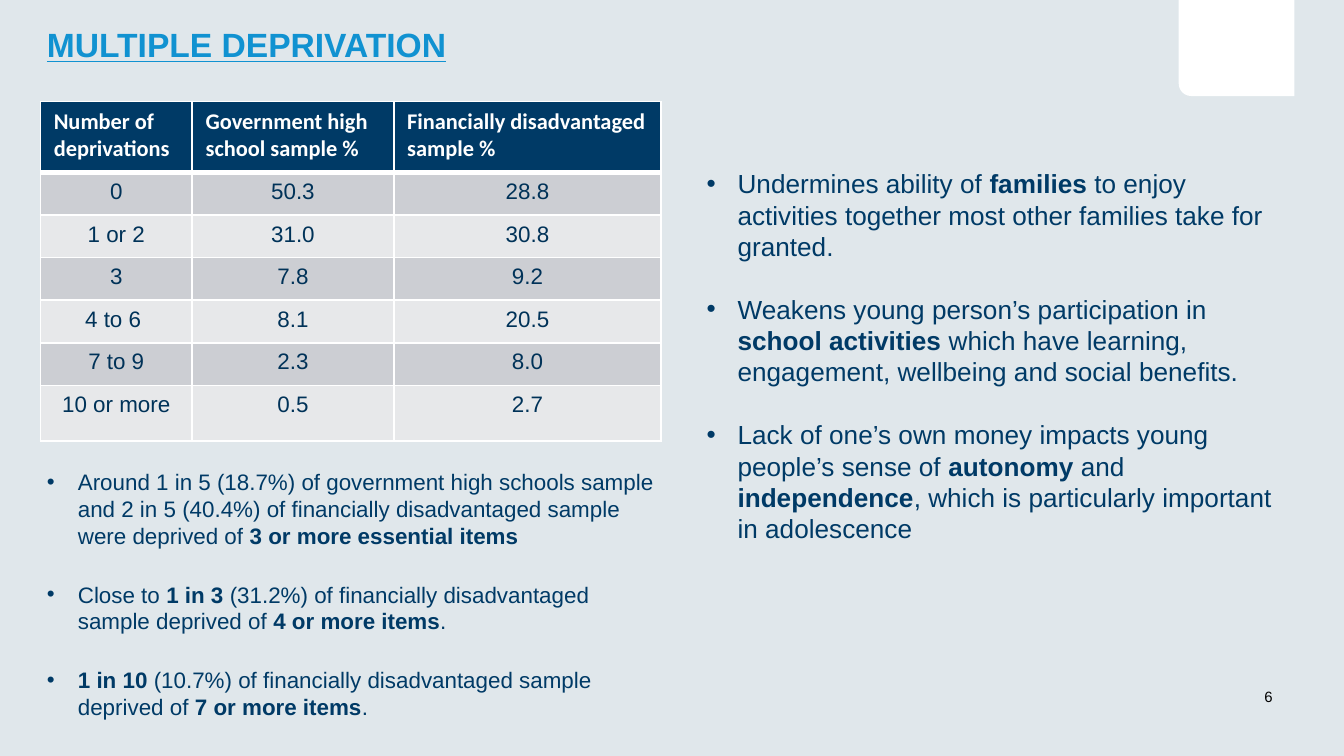
from dataclasses import dataclass

import pptx
import pptx.dml.color
import pptx.enum.shapes
import pptx.enum.text
import pptx.oxml
import pptx.oxml.ns
import pptx.util

SLIDE_WIDTH = pptx.util.Inches(10)
SLIDE_HEIGHT = pptx.util.Inches(5.625)
NAVY, DARK_NAVY, SKY, WHITE = "003A66", "003258", "1192D1", "FFFFFF"
BAND_FILLS = ("CCCED3", "E7E8EA")
BULLET_INDENT = pptx.util.Inches(0.23)


@dataclass
class Area:
    """A rectangle in percent of the slide's width and height."""
    left: float
    top: float
    width: float
    height: float

    def lengths(self):
        return across(self.left), down(self.top), across(self.width), down(self.height)


@dataclass
class Style:
    size: float
    color: str
    font: str = "Arial"
    bold: bool = False
    underline: bool = False


@dataclass
class BulletList:
    area: Area
    style: Style
    gap: float
    inset: tuple[float, float]
    items: list[list[str]]  # runs that start with * are bold


def across(percent: float) -> int:
    return round(SLIDE_WIDTH * percent / 100)


def down(percent: float) -> int:
    return round(SLIDE_HEIGHT * percent / 100)


def paint(target, color: str) -> None:
    """Give a fill or a font a solid colour."""
    if hasattr(target, "solid"):
        target.solid()
        target.fore_color.rgb = pptx.dml.color.RGBColor.from_string(color)
    else:
        target.color.rgb = pptx.dml.color.RGBColor.from_string(color)


def add_run(para, text: str, style: Style, bold: bool = False) -> None:
    span = para.add_run()
    span.text = text
    span.font.name = style.font
    span.font.size = pptx.util.Pt(style.size)
    span.font.bold = style.bold or bold
    if style.underline:
        span.font.underline = True
    paint(span.font, style.color)


def add_box(page, area: Area, inset: tuple[float, float]):
    frame = page.shapes.add_textbox(*area.lengths()).text_frame
    frame.word_wrap = True
    frame.margin_left = frame.margin_right = pptx.util.Inches(inset[0])
    frame.margin_top = frame.margin_bottom = pptx.util.Inches(inset[1])
    return frame


def add_bullets(page, block: BulletList) -> None:
    frame = add_box(page, block.area, block.inset)
    for index, item in enumerate(block.items):
        para = frame.add_paragraph() if index else frame.paragraphs[0]
        properties = para._p.get_or_add_pPr()
        properties.set("marL", str(BULLET_INDENT))
        properties.set("indent", str(-BULLET_INDENT))
        properties.append(pptx.oxml.parse_xml(
            f'<a:buFont {pptx.oxml.ns.nsdecls("a")} typeface="Arial"/>'))
        properties.append(pptx.oxml.parse_xml(
            f'<a:buChar {pptx.oxml.ns.nsdecls("a")} char="•"/>'))
        if index:
            para.space_before = pptx.util.Pt(block.gap)
        for text in item:
            add_run(para, text.removeprefix("*"), block.style, text.startswith("*"))


def set_borders(cell, bottom: float = 1, top: float = 1) -> None:
    properties = cell._tc.get_or_add_tcPr()
    widths = {"lnL": 1, "lnR": 1, "lnT": top, "lnB": bottom}
    for index, (side, width) in enumerate(widths.items()):
        properties.insert(index, pptx.oxml.parse_xml(
            f'<a:{side} {pptx.oxml.ns.nsdecls("a")} w="{pptx.util.Pt(width)}">'
            f'<a:solidFill><a:srgbClr val="{WHITE}"/></a:solidFill></a:{side}>'))


def add_table(page, area: Area, columns: list[float], heights: list[float],
              rows: list[tuple[str, ...]]) -> None:
    header = Style(12, WHITE, "Calibri", bold=True)
    body = Style(12, DARK_NAVY)
    table = page.shapes.add_table(len(rows), len(columns), *area.lengths()).table
    for column, width in zip(table.columns, columns):
        column.width = across(width)
    for row, height in zip(table.rows, heights):
        row.height = down(height)
    for row_index, texts in enumerate(rows):
        for column_index, text in enumerate(texts):
            cell = table.cell(row_index, column_index)
            para = cell.text_frame.paragraphs[0]
            if row_index == 0:
                paint(cell.fill, NAVY)
                set_borders(cell, bottom=3)
                add_run(para, text, header)
            else:
                paint(cell.fill, BAND_FILLS[(row_index - 1) % 2])
                set_borders(cell, top=3 if row_index == 1 else 1)
                para.alignment = pptx.enum.text.PP_ALIGN.CENTER
                add_run(para, text, body)


DEPRIVATION_ROWS = [
    ("Number of deprivations", "Government high school sample %",
     "Financially disadvantaged sample %"),
    ("0", "50.3", "28.8"),
    ("1 or 2", "31.0", "30.8"),
    ("3", "7.8", "9.2"),
    ("4 to 6 ", "8.1", "20.5"),
    ("7 to 9", "2.3", "8.0"),
    ("10 or more", "0.5", "2.7"),
]

FINDINGS = BulletList(Area(3.5, 61.9, 45.7, 37.1), Style(12, NAVY), 17.2, (0, 0), [
    ["Around 1 in 5 (18.7%) of government high schools sample and 2 in 5 (40.4%) of "
     "financially disadvantaged sample were deprived of ", "*3 or more essential items"],
    ["Close to ", "*1 in 3 ", "(31.2%) of financially disadvantaged sample deprived of ",
     "*4 or more items", "."],
    ["*1 in 10 ", "(10.7%) of financially disadvantaged sample deprived of ",
     "*7 or more items", "."],
])

IMPACTS = BulletList(Area(51.6, 21.3, 44.7, 52.1), Style(14, NAVY), 16.8, (0.1, 0.05), [
    ["Undermines ability of ", "*families",
     " to enjoy activities together most other families take for granted."],
    ["Weakens young person’s participation in ", "*school activities ",
     "which have learning, engagement, wellbeing and social benefits."],
    ["Lack of one’s own money impacts young people’s sense of ", "*autonomy ", "and",
     "* independence", ", which is particularly important in adolescence"],
])


def main() -> None:
    deck = pptx.Presentation()
    deck.slide_width, deck.slide_height = SLIDE_WIDTH, SLIDE_HEIGHT
    page = deck.slides.add_slide(deck.slide_layouts[6])
    paint(page.background.fill, "E0E7EB")

    # White corner tab
    tab = page.shapes.add_shape(pptx.enum.shapes.MSO_SHAPE.ROUND_1_RECTANGLE,
                                *Area(87.7, 0, 8.6, 12.7).lengths())
    tab.adjustments[0] = 0.13
    tab.rotation = 180
    tab.shadow.inherit = False
    tab.line.fill.background()
    paint(tab.fill, WHITE)

    # Page number and title
    number = add_box(page, Area(93.1, 90.1, 5.6, 4.3), (0.1, 0.05))
    add_run(number.paragraphs[0], "6", Style(8, "000000"))
    title = add_box(page, Area(3.5, 3.2, 72.7, 16.7), (0, 0))
    add_run(title.paragraphs[0], "MULTIPLE DEPRIVATION",
            Style(18, SKY, bold=True, underline=True))

    # Table and the two bullet lists
    add_table(page, Area(3, 13.4, 46.2, 45), [11.3, 15, 19.9],
              [9.4] + [5.64] * 5 + [7.4], DEPRIVATION_ROWS)
    for block in (FINDINGS, IMPACTS):
        add_bullets(page, block)

    deck.save("out.pptx")


if __name__ == "__main__":
    main()
